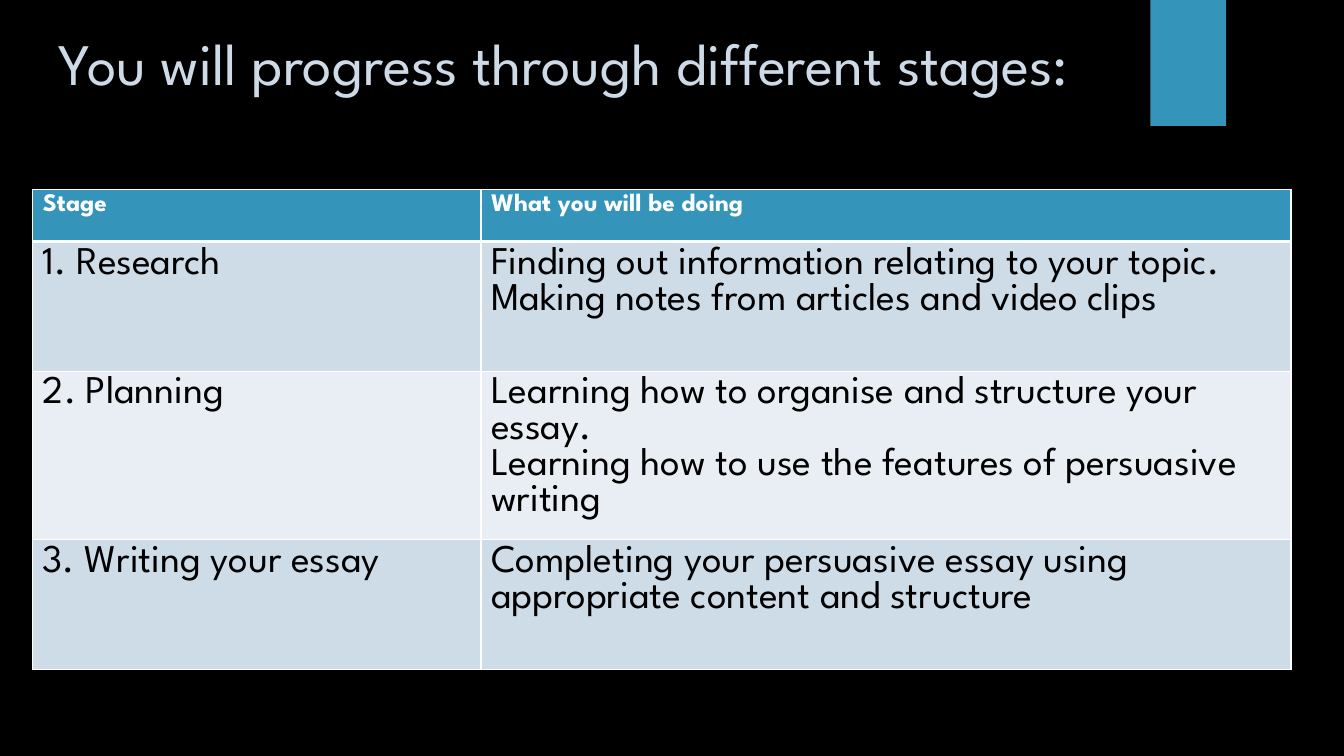
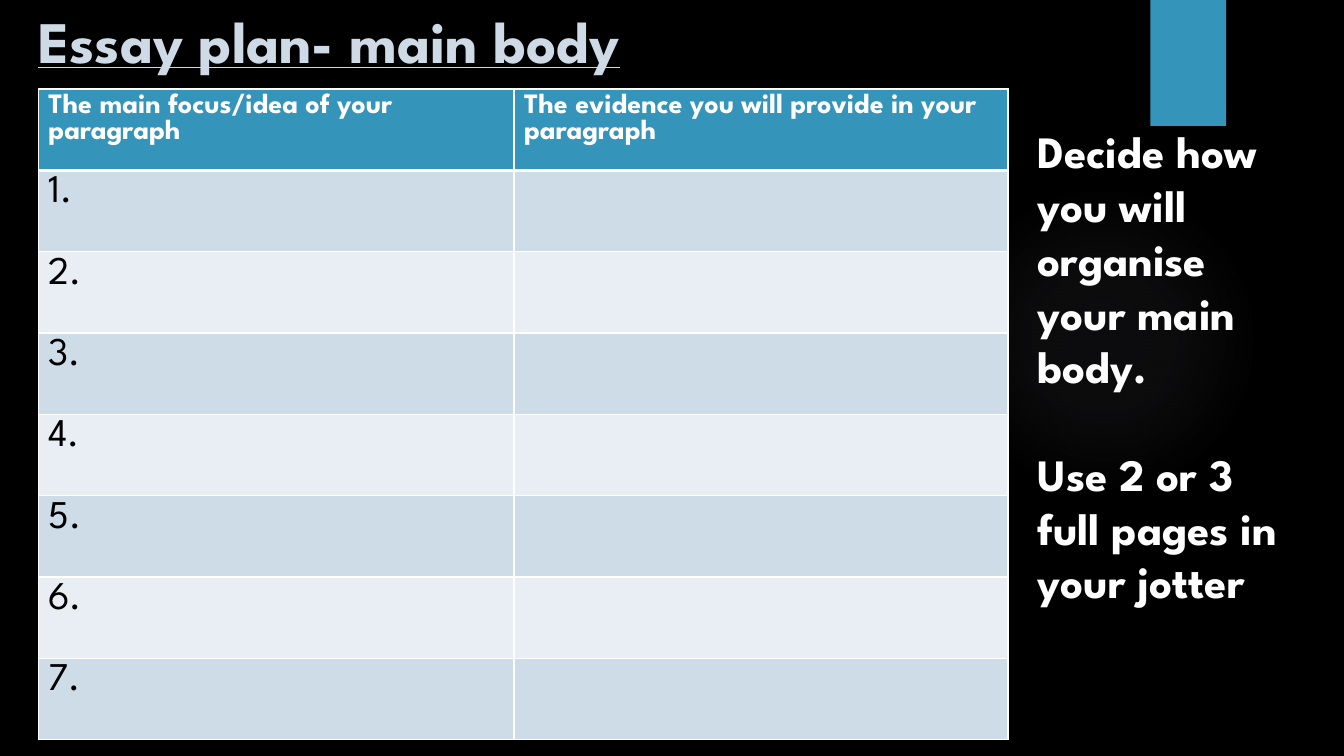
from lxml.etree import SubElement
from pptx import Presentation
from pptx.dml.color import RGBColor
from pptx.enum.shapes import MSO_SHAPE
from pptx.oxml import parse_xml
from pptx.oxml.ns import nsdecls, qn
from pptx.util import Pt

FONT = "League Spartan"
BLACK = "000000"
WHITE = "FFFFFF"
ACCENT = "3494BA"
TITLE_COLOR = "CEDBE6"
GLOW_COLOR = "AAA7BC"
ROW_FILLS = ("CEDCE7", "E8EEF3")
GLOW_STOPS = ((0, 7), (36, 6), (69, 0))


def color(hex_string):
    return RGBColor.from_string(hex_string)


def paint(fill, hex_string):
    fill.solid()
    fill.fore_color.rgb = color(hex_string)


def write_text(frame, text, size=28, ink=BLACK, bold=False, underline=False,
               line_height=None, gap=0):
    frame.word_wrap = True
    for index, line in enumerate(text.split("\n")):
        paragraph = frame.paragraphs[0] if index == 0 else frame.add_paragraph()
        if line_height:
            paragraph.line_spacing = Pt(line_height)
        if index and gap:
            paragraph.space_before = Pt(gap)
        run = paragraph.add_run()
        run.text = line
        run.font.name = FONT
        run.font.size = Pt(size)
        run.font.bold = bold
        run.font.underline = underline
        run.font.color.rgb = color(ink)


def add_text(slide, text, left, top, width, height, **text_format):
    box = slide.shapes.add_textbox(Pt(left), Pt(top), Pt(width), Pt(height))
    write_text(box.text_frame, text, **text_format)


def add_title(slide, text, left, top, **text_format):
    add_text(slide, text, left, top, 741, 110, size=42, ink=TITLE_COLOR, **text_format)


def add_plain_shape(slide, preset, left, top, width, height):
    shape = slide.shapes.add_shape(preset, Pt(left), Pt(top), Pt(width), Pt(height))
    shape.shadow.inherit = False
    shape.line.fill.background()
    return shape


def add_glow(slide):
    glow = add_plain_shape(slide, MSO_SHAPE.OVAL, 677.5, 131.8, 221.8, 221.8)
    stops = "".join(
        f'<a:gs pos="{position * 1000}"><a:srgbClr val="{GLOW_COLOR}">'
        f'<a:alpha val="{opacity * 1000}"/></a:srgbClr></a:gs>'
        for position, opacity in GLOW_STOPS
    )
    gradient = parse_xml(
        f'<a:gradFill {nsdecls("a")}><a:gsLst>{stops}</a:gsLst><a:path path="circle">'
        '<a:fillToRect l="50000" t="50000" r="50000" b="50000"/></a:path></a:gradFill>'
    )
    glow._element.spPr.find(qn("a:prstGeom")).addnext(gradient)


def add_base_slide(deck):
    slide = deck.slides.add_slide(deck.slide_layouts[6])
    paint(slide.background.fill, BLACK)
    add_glow(slide)
    ribbon = add_plain_shape(slide, MSO_SHAPE.RECTANGLE, 821.8, 0, 54, 90)
    paint(ribbon.fill, ACCENT)
    return slide


def set_borders(cell, row):
    properties = cell._tc.get_or_add_tcPr()
    widths = {"lnL": 1, "lnR": 1, "lnT": 3 if row == 1 else 1, "lnB": 3 if row == 0 else 1}
    for side, width in widths.items():
        border = SubElement(properties, qn(f"a:{side}"), w=str(Pt(width)))
        solid = SubElement(border, qn("a:solidFill"))
        SubElement(solid, qn("a:srgbClr"), val=WHITE)


def add_stage_table(slide, rows, left, top, column_widths, row_heights, header_size):
    frame = slide.shapes.add_table(
        len(rows), len(column_widths), Pt(left), Pt(top),
        Pt(sum(column_widths)), Pt(sum(row_heights)),
    )
    table = frame.table
    header_format = {"size": header_size, "ink": WHITE, "bold": True}
    body_format = {"line_height": 25.7}
    for column, width in zip(table.columns, column_widths):
        column.width = Pt(width)
    for index, (texts, height) in enumerate(zip(rows, row_heights)):
        table.rows[index].height = Pt(height)
        header = index == 0
        for cell, text in zip(table.rows[index].cells, texts):
            set_borders(cell, index)
            paint(cell.fill, ACCENT if header else ROW_FILLS[(index - 1) % 2])
            if text:
                write_text(cell.text_frame, text, **(header_format if header else body_format))


def add_stages_slide(deck):
    slide = add_base_slide(deck)
    add_title(slide, "You will progress through different stages:", 34.6, 15.8)
    stages = [
        ("Stage", "What you will be doing"),
        ("1. Research",
         "Finding out information relating to your topic. "
         "Making notes from articles and video clips"),
        ("2. Planning",
         "Learning how to organise and structure your essay.\n"
         "Learning how to use the features of persuasive writing"),
        ("3. Writing your essay",
         "Completing your persuasive essay using appropriate content and structure"),
    ]
    add_stage_table(slide, stages, 23.4, 135.2, (320.2, 578.6), (37.4, 92.6, 120.4, 92.6), 18)


def add_plan_slide(deck):
    slide = add_base_slide(deck)
    add_title(slide, "Essay plan- main body", 20.2, 0, bold=True, underline=True)
    plan = [("The main focus/idea of your paragraph",
             "The evidence you will provide in your paragraph")]
    plan += [(f"{number}.", "") for number in range(1, 8)]
    add_stage_table(slide, plan, 27.4, 63.6, (339.8, 352.8), [58.1] * len(plan), 20)
    add_text(slide,
             "Decide how you will organise your main body.\n"
             "Use 2 or 3 full pages in your jotter",
             734, 85, 200.9, 433.4, size=32, ink=WHITE, bold=True, gap=38.4)


def main():
    deck = Presentation()
    deck.slide_width = Pt(960)
    deck.slide_height = Pt(540)
    add_stages_slide(deck)
    add_plan_slide(deck)
    deck.save("out.pptx")


if __name__ == "__main__":
    main()
